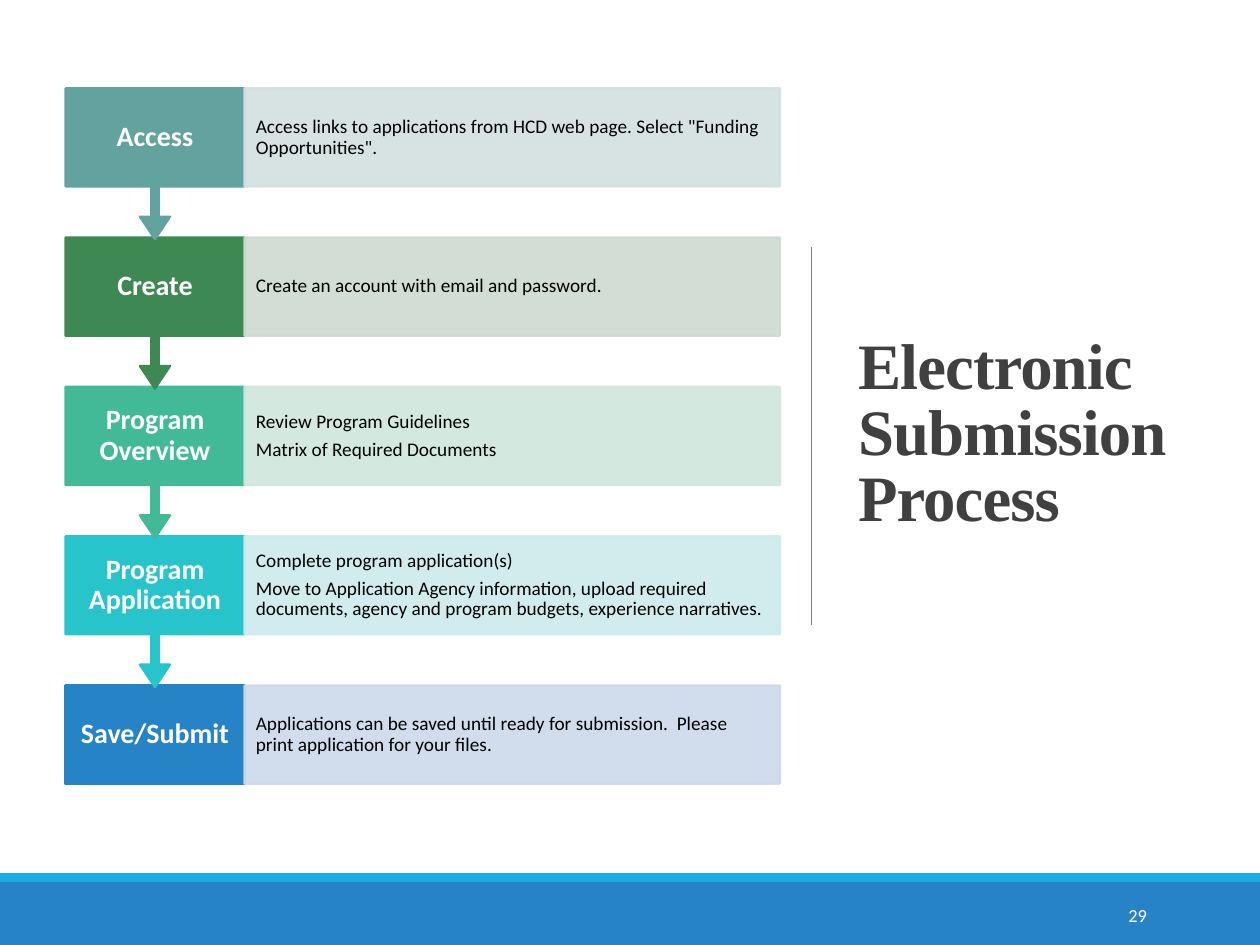
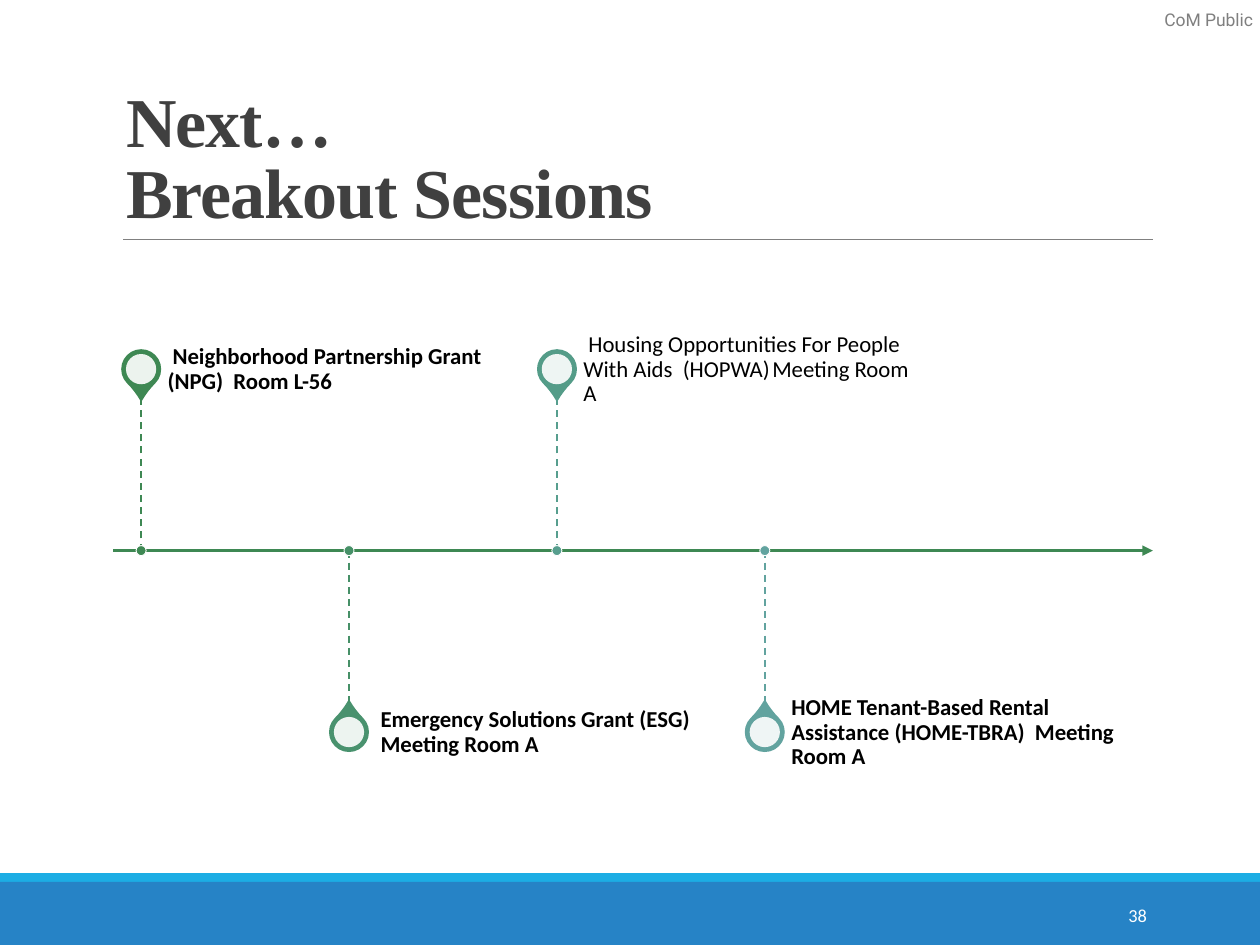
from dataclasses import dataclass

from lxml import etree
from pptx import Presentation
from pptx.dml.color import RGBColor
from pptx.enum.dml import MSO_LINE
from pptx.enum.shapes import MSO_CONNECTOR, MSO_SHAPE
from pptx.enum.text import MSO_ANCHOR, MSO_AUTO_SIZE, PP_ALIGN
from pptx.oxml.ns import qn
from pptx.util import Inches, Pt

RECT, OVAL = MSO_SHAPE.RECTANGLE, MSO_SHAPE.OVAL
CALLOUT, TEAR = MSO_SHAPE.DOWN_ARROW_CALLOUT, MSO_SHAPE.TEAR
LEFT, CENTER, RIGHT = PP_ALIGN.LEFT, PP_ALIGN.CENTER, PP_ALIGN.RIGHT
TOP, MIDDLE, BOTTOM = MSO_ANCHOR.TOP, MSO_ANCHOR.MIDDLE, MSO_ANCHOR.BOTTOM
STRAIGHT, DASH = MSO_CONNECTOR.STRAIGHT, MSO_LINE.DASH

# The slide is a grid of 100 columns by 75 rows of square cells
COLS, ROWS = 100, 75
CELL = Inches(0.1)


@dataclass(frozen=True)
class Theme:
    band: str = "2683C6"
    stripe: str = "1CADE4"
    rule: str = "808080"
    title: str = "404040"
    axis: str = "3E8853"
    black: str = "000000"
    white: str = "FFFFFF"
    body_font: str = "Calibri"
    title_font: str = "Times New Roman"
    tag_font: str = "Roboto"
    side_title: float = 37
    top_title: float = 40
    step: float = 16
    session: float = 13
    detail: float = 11
    number: float = 10.5
    tag: float = 10
    outline: float = 1.25
    hairline: float = 0.5


T = Theme()

# Step name, its colour, panel colour, panel paragraphs
STEPS = [
    ("Access", "62A39F", "D3E0DF",
     ['Access links to applications from HCD web page. Select "Funding Opportunities".']),
    ("Create", "3E8853", "CEDAD1",
     ["Create an account with email and password."]),
    ("Program Overview", "42BA97", "CFE7DD",
     ["Review Program Guidelines", "Matrix of Required Documents"]),
    ("Program Application", "28C4CC", "CDEAEC",
     ["Complete program application(s)",
      "Move to Application Agency information, upload required documents, "
      "agency and program budgets, experience narratives."]),
    ("Save/Submit", "2683C6", "CDD9EA",
     ["Applications can be saved until ready for submission.  "
      "Please print application for your files."]),
]

# Words, pin colour, stem colour, bold, left margin and first-line indent in cells
SESSIONS = [
    ("Neighborhood Partnership Grant (NPG)  Room L-56",
     "3E8853", "3E8853", True, 0, 0.4),
    ("Emergency Solutions Grant (ESG) Meeting Room A",
     "49926E", "469067", True, 0.4, 0),
    ("Housing Opportunities For People With Aids  (HOPWA)\tMeeting Room A",
     "549C88", "579E8E", False, 0, 0.4),
    ("HOME Tenant-Based Rental Assistance (HOME-TBRA)  Meeting Room A",
     "62A39F", "62A39F", True, 0, 0),
]


def cells(*lengths):
    return [round(n * CELL) for n in lengths]


def rgb(color):
    return RGBColor.from_string(color)


def set_all(obj, values):
    for name, value in values.items():
        setattr(obj, name, value)


def set_alpha(element, percent):
    for color in element.iter(qn("a:srgbClr")):
        etree.SubElement(color, qn("a:alpha")).set("val", str(percent * 1000))


def format_frame(tf, anchor=MIDDLE, insets=(1, 0.5, 1, 0.5), wrap=True):
    left, top, right, bottom = cells(*insets)
    set_all(tf, {"word_wrap": wrap, "auto_size": MSO_AUTO_SIZE.NONE,
                 "vertical_anchor": anchor, "margin_left": left, "margin_top": top,
                 "margin_right": right, "margin_bottom": bottom})


def write(tf, paragraphs, size, color=T.black, font=T.body_font, bold=False,
          align=LEFT, spacing=1.0, after=0.0):
    """Fill a text frame; a newline inside a paragraph is a line break."""
    for i, text in enumerate(paragraphs):
        p = tf.add_paragraph() if i else tf.paragraphs[0]
        set_all(p, {"alignment": align, "line_spacing": spacing,
                    "space_before": Pt(0), "space_after": Pt(after)})
        for j, line in enumerate(text.split("\n")):
            if j:
                p.add_line_break()
            r = p.add_run()
            r.text = line
            set_all(r.font, {"size": Pt(size), "name": font, "bold": bold})
            r.font.color.rgb = rgb(color)


def add_shape(s, kind, at, fill, line=None, width=T.outline, alpha=None, adj=()):
    sp = s.shapes.add_shape(kind, *cells(*at))
    sp.shadow.inherit = False
    for i, value in enumerate(adj):
        sp.adjustments[i] = value
    sp.fill.solid()
    sp.fill.fore_color.rgb = rgb(fill)
    if line:
        sp.line.color.rgb = rgb(line)
        sp.line.width = Pt(width)
    else:
        sp.line.fill.background()
    if alpha:
        set_alpha(sp.fill._xPr, alpha)
    return sp


def add_line(s, start, end, color, width, dash=None, arrow=False):
    c = s.shapes.add_connector(STRAIGHT, *cells(*start, *end))
    c.line.color.rgb = rgb(color)
    c.line.width = Pt(width)
    if dash:
        c.line.dash_style = dash
    if arrow:
        etree.SubElement(c.line._get_or_add_ln(), qn("a:tailEnd")).set("type", "triangle")
    etree.SubElement(c._element.spPr, qn("a:effectLst"))


def add_text(s, at, paragraphs, size, frame, **style):
    tf = s.shapes.add_textbox(*cells(*at)).text_frame
    format_frame(tf, **frame)
    write(tf, paragraphs, size, **style)
    return tf


def add_slide(prs, title, at, size, anchor, number):
    """Title, footer bands and page number, alike on every slide."""
    s = prs.slides.add_slide(prs.slide_layouts[5])
    sp = s.shapes.title
    set_all(sp, dict(zip(("left", "top", "width", "height"), cells(*at))))
    format_frame(sp.text_frame, anchor)
    write(sp.text_frame, [title], size, T.title, T.title_font, True, spacing=0.85)
    for r in sp.text_frame.paragraphs[0].runs:
        r.font._element.set("spc", "-50")
    add_shape(s, RECT, (0, 69.3, COLS, 0.7), T.stripe)
    add_shape(s, RECT, (0, 70, COLS, ROWS - 70), T.band)
    add_text(s, (81.2, 70.6, 10.8, 4), [number], T.number, {},
             color=T.white, align=RIGHT)
    return s


def add_step(s, row, name, color, panel, details, last):
    left, name_w, panel_w, height, arrow_h = 5.2, 14.2, 42.5, 7.8, 12
    if last:
        sp = add_shape(s, RECT, (left, row, name_w, height), color, color)
    else:
        sp = add_shape(s, CALLOUT, (left, row, name_w, arrow_h), color, color,
                       adj=(0.05, 0.1, 0.15, height / arrow_h))
    format_frame(sp.text_frame, insets=(1, 1.2, 1, 1.2))
    write(sp.text_frame, [name], T.step, T.white, bold=True, align=CENTER, spacing=0.9)

    sp = add_shape(s, RECT, (left + name_w, row, panel_w, height), panel, panel, alpha=90)
    format_frame(sp.text_frame, insets=(0.9, 1.5, 0.9, 1.5))
    write(sp.text_frame, details, T.detail, spacing=0.9, after=4)


def add_session(s, x, axis, side, words, pin, stem, bold, margin, indent):
    """A pin above (side -1) or below (side 1) the axis, with its stem and words."""
    y = axis + side * 14.4
    add_shape(s, TEAR, (x - 1.5, y - 1.5, 3, 3), pin, pin,
              adj=(1.15,)).rotation = 135 if side < 0 else 315
    add_shape(s, OVAL, (x - 1.2, y - 1.2, 2.4, 2.4), T.white, alpha=90)
    tf = add_text(s, (x + 2.1, y - 2.1, 27.5, 4.3), [words], T.session,
                  {"insets": (0, 0, 0.9, 0)}, bold=bold, spacing=0.9)
    pPr = tf.paragraphs[0]._p.get_or_add_pPr()
    for name, value in zip(("marL", "indent"), cells(margin, indent)):
        pPr.set(name, str(value))
    if "\t" in words:
        tabs = etree.SubElement(pPr, qn("a:tabLst"))
        tab = etree.SubElement(tabs, qn("a:tab"))
        tab.set("pos", str(cells(16.5)[0]))
        tab.set("algn", "l")
    add_line(s, (x, axis), (x, axis + side * 12.3), stem, 1, DASH)
    add_shape(s, OVAL, (x - 0.4, axis - 0.4, 0.8, 0.8), stem, T.white, T.hairline)


def build_process(prs):
    s = add_slide(prs, "Electronic Submission Process", (67.1, 6.9, 27.7, 55.3),
                  T.side_title, MIDDLE, "29")
    add_line(s, (64.4, 19.6), (64.4, 49.6), T.rule, T.hairline)
    # Bottom step first, so that each arrow tip lies over the next step
    first_row, pitch, last = 7, 11.85, len(STEPS) - 1
    for i in reversed(range(len(STEPS))):
        add_step(s, first_row + i * pitch, *STEPS[i], last=i == last)


def build_sessions(prs):
    s = add_slide(prs, "Next…\nBreakout Sessions", (9, 3.1, 82.5, 15.9),
                  T.top_title, BOTTOM, "38")
    add_line(s, (9.8, 19), (91.5, 19), T.rule, T.hairline)
    tf = add_text(s, (92.4, 0.7, 7.2, 1.7), ["CoM Public"], T.tag,
                  {"anchor": TOP, "insets": (0, 0, 0, 0), "wrap": False},
                  font=T.tag_font)
    set_alpha(tf.paragraphs[0]._p, 50)
    # Timeline with sessions alternating above and below
    axis, first_col, pitch = 43.7, 11.2, 16.5
    add_line(s, (9, axis), (91.5, axis), T.axis, 1.5, arrow=True)
    for i, session in enumerate(SESSIONS):
        add_session(s, first_col + i * pitch, axis, 1 if i % 2 else -1, *session)


def main():
    prs = Presentation()
    prs.slide_width, prs.slide_height = COLS * CELL, ROWS * CELL
    build_process(prs)
    build_sessions(prs)
    prs.save("out.pptx")


if __name__ == "__main__":
    main()
